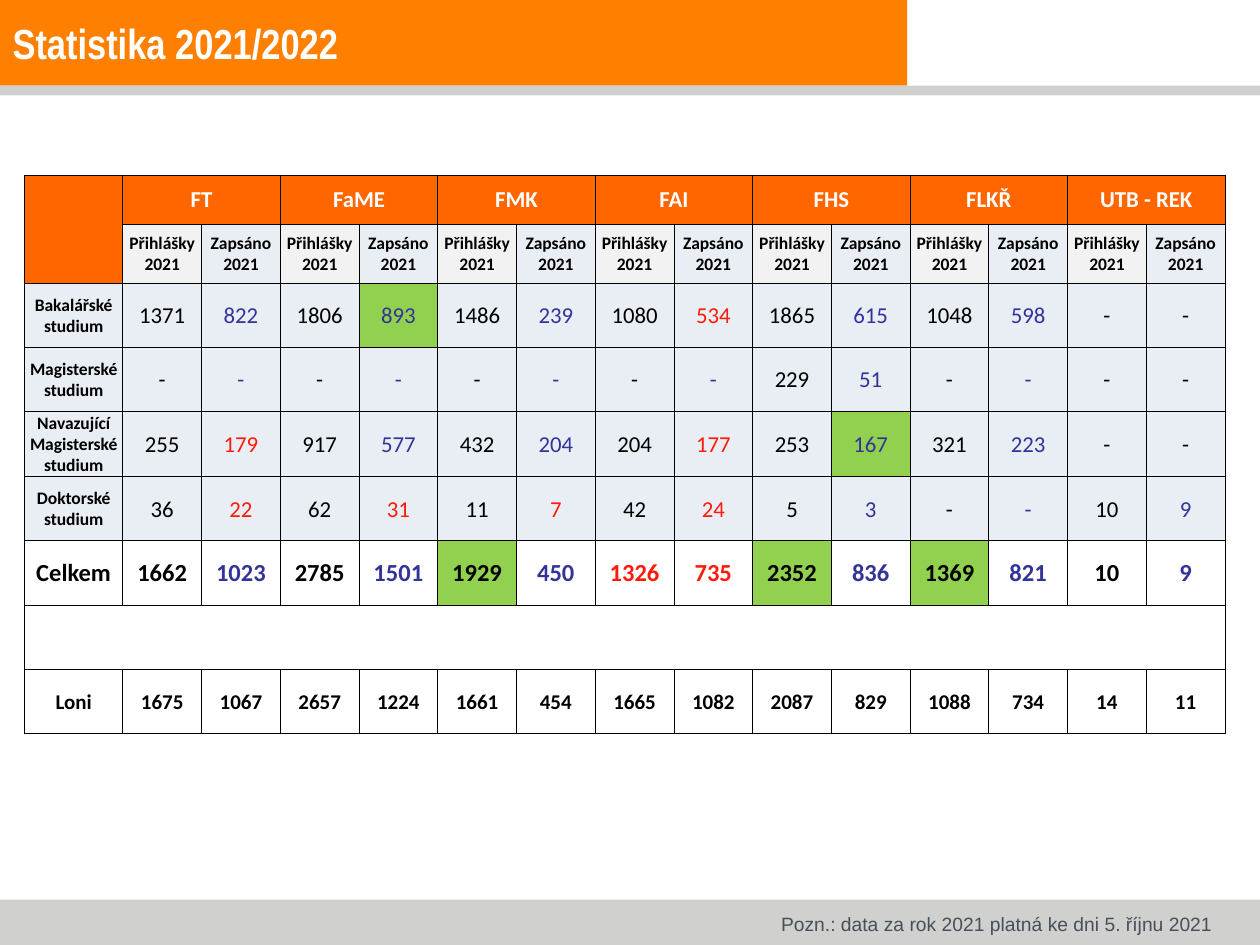
from lxml.etree import SubElement
from pptx import Presentation
from pptx.dml.color import RGBColor
from pptx.enum.shapes import MSO_SHAPE as Shape
from pptx.enum.text import MSO_ANCHOR as Anchor, MSO_AUTO_SIZE as AutoSize, PP_ALIGN as Align
from pptx.oxml.ns import qn
from pptx.util import Pt

COLORS = {
    "orange": "FF8001", "head": "FF6600", "grey": "D0D0CE", "white": "FFFFFF",
    "black": "000000", "blue": "333399", "red": "FF1A0A", "green": "92D050",
    "pale": "E9EDF4", "light": "F2F2F2", "slate": "46505A", "shade": "808080",
}
FACULTIES = ["FT", "FaME", "FMK", "FAI", "FHS", "FLKŘ", "UTB - REK"]
MARKS = {"r": "red", "k": "black"}
STUDIES = {
    "Bakalářské studium": "1371 822 1806 893g 1486 239 1080 534r 1865 615 1048 598 - -k",
    "Magisterské studium": "- - - - - - - - 229 51 - - - -k",
    "Navazující Magisterské studium": "255 179r 917 577 432 204 204 177r 253 167g 321 223 - -k",
    "Doktorské studium": "36 22r 62 31r 11 7r 42 24r 5 3 - - 10 9",
}
TOTALS = "1662 1023 2785 1501 1929g 450 1326r 735r 2352g 836 1369g 821 10 9"
LAST_YEAR = "1675 1067 2657 1224 1661 454 1665 1082 2087 829 1088 734 14 11"


def rgb(name):
    """Return the named colour."""
    return RGBColor.from_string(COLORS[name])


def write(frame, text, color, align=Align.LEFT, **font):
    """Put one formatted paragraph in a text frame and return its run."""
    para = frame.paragraphs[0]
    para.alignment = align
    span = para.add_run()
    span.text = text
    for name, value in font.items():
        setattr(span.font, name, value)
    span.font.color.rgb = rgb(color)
    return span


def add_band(page, box, color):
    """Draw a plain coloured bar."""
    band = page.shapes.add_shape(Shape.RECTANGLE, *map(Pt, box))
    band.shadow.inherit = False
    band.fill.solid()
    band.fill.fore_color.rgb = rgb(color)
    band.line.fill.background()


def add_text_shadow(span):
    """Give a run a grey drop shadow."""
    effects = SubElement(span.font._element, qn("a:effectLst"))
    shadow = SubElement(effects, qn("a:outerShdw"), dist="38100", dir="2700000", algn="tl")
    SubElement(shadow, qn("a:srgbClr"), val=COLORS["shade"])
    latin = span.font._element.find(qn("a:latin"))
    latin.addprevious(effects)


def place_title(page, box, text):
    """Move the title placeholder into the box and fill it."""
    title = page.shapes.title
    title.left, title.top, title.width, title.height = map(Pt, box)
    frame = title.text_frame
    frame.auto_size = AutoSize.NONE
    frame.vertical_anchor = Anchor.MIDDLE
    span = write(frame, text, "white", name="Arial Narrow", size=Pt(24), bold=True)
    add_text_shadow(span)


def style_cell(cell, fill=None):
    """Set margins, borders and fill of a table cell."""
    cell.margin_left = cell.margin_right = cell.margin_top = Pt(0.7)
    cell.margin_bottom = 0
    cell.vertical_anchor = Anchor.MIDDLE
    for side in ("lnL", "lnR", "lnT", "lnB"):
        border = SubElement(cell._tc.get_or_add_tcPr(), qn(f"a:{side}"), w=str(Pt(0.5)))
        solid = SubElement(border, qn("a:solidFill"))
        SubElement(solid, qn("a:srgbClr"), val=COLORS["black"])
    if fill:
        cell.fill.solid()
        cell.fill.fore_color.rgb = rgb(fill)
    else:
        cell.fill.background()


def fill_cell(cell, text, size, color="black", bold=True, fill=None):
    """Style a cell and write its centred text."""
    style_cell(cell, fill)
    write(cell.text_frame, text, color, Align.CENTER, name="Calibri", size=Pt(size), bold=bold)


def fill_row(table, row, label, values, label_size, size, bold, fill=None, second="blue"):
    """Write a label and its marked values, colouring every second one."""
    fill_cell(table.cell(row, 0), label, label_size, fill=fill)
    for column, value in enumerate(values.split(), 1):
        text = value.rstrip("rgk")
        mark = value[len(text):]
        color = MARKS.get(mark, "black" if column % 2 else second)
        back = "green" if mark == "g" else fill
        fill_cell(table.cell(row, column), text, size, color, bold, back)


def fill_header(table):
    """Write the faculty names and their two subheadings."""
    for row in range(2):
        style_cell(table.cell(row, 0), "head")
    for column, faculty in enumerate(FACULTIES):
        left, right = 2 * column + 1, 2 * column + 2
        fill_cell(table.cell(0, left), faculty, 13, "white", fill="head")
        style_cell(table.cell(0, right), "head")
        table.cell(0, left).merge(table.cell(0, right))
        fill_cell(table.cell(1, left), "Přihlášky 2021", 10, fill="light")
        fill_cell(table.cell(1, right), "Zapsáno 2021", 10, fill="pale")
    table.cell(0, 0).merge(table.cell(1, 0))


def place_table(page, box):
    """Build the statistics table in the box."""
    left, top, width, height = box
    columns, label_width, heads = 2 * len(FACULTIES) + 1, 56.2, [28.1, 33.8]
    rows = len(heads) + len(STUDIES) + 3
    table = page.shapes.add_table(rows, columns, *map(Pt, box)).table
    table.first_row = table.horz_banding = False
    for index, column in enumerate(table.columns):
        column.width = Pt((width - label_width) / (columns - 1) if index else label_width)
    body_height = (height - sum(heads)) / (rows - len(heads))
    for index, row in enumerate(table.rows):
        row.height = Pt(heads[index] if index < len(heads) else body_height)
    fill_header(table)
    for row, (label, values) in enumerate(STUDIES.items(), len(heads)):
        fill_row(table, row, label, values, 10, 13, False, "pale")
    fill_row(table, rows - 3, "Celkem", TOTALS, 14, 14, True)
    for column in range(columns):
        style_cell(table.cell(rows - 2, column))
    table.cell(rows - 2, 0).merge(table.cell(rows - 2, columns - 1))
    fill_row(table, rows - 1, "Loni", LAST_YEAR, 12, 12, True, second="black")


def place_note(page, box, text):
    """Write the footnote in the box."""
    frame = page.shapes.add_textbox(*map(Pt, box)).text_frame
    frame.word_wrap = False
    frame.auto_size = AutoSize.SHAPE_TO_FIT_TEXT
    write(frame, text, "slate", name="Arial", size=Pt(11))


def main():
    """Build and save the deck."""
    deck = Presentation()
    deck.slide_width, deck.slide_height = Pt(720), Pt(540)
    page = deck.slides.add_slide(deck.slide_layouts[5])
    add_band(page, (0, 0, 518.4, 49), "orange")
    add_band(page, (0, 514, 720, 26), "grey")
    add_band(page, (0, 49, 720, 5.5), "grey")
    title = page.shapes.title._element
    title.getparent().append(title)
    place_title(page, (0, 0, 518.4, 49), "Statistika 2021/2022")
    place_table(page, (14, 100, 686.2, 318.8))
    place_note(page, (439.2, 517.7, 262, 20.9), "Pozn.: data za rok 2021 platná ke dni 5. říjnu 2021")
    deck.save("out.pptx")


if __name__ == "__main__":
    main()
